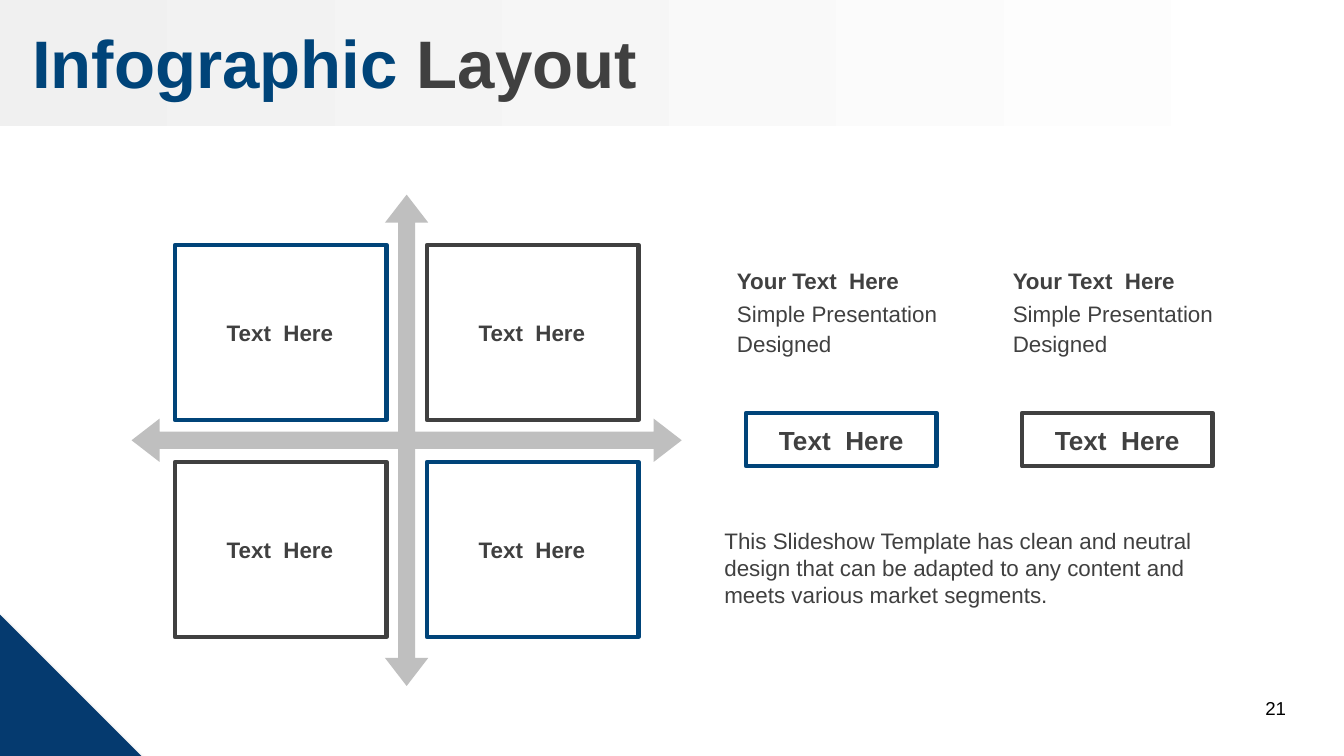
from lxml import etree
from pptx import Presentation
from pptx import util as u
from pptx.dml.color import RGBColor
from pptx.enum import shapes, text
from pptx.oxml import ns

PX = 9525  # EMU, 96 px to the inch
NAVY = RGBColor(0x00, 0x44, 0x79)
CORNER_BLUE = RGBColor(0x05, 0x3A, 0x6F)
CHARCOAL = RGBColor(0x40, 0x40, 0x40)
GREY = RGBColor(0xBF, 0xBF, 0xBF)
PALE = RGBColor(0xF0, 0xF0, 0xF0)
WHITE = RGBColor(0xFF, 0xFF, 0xFF)
BLACK = RGBColor(0x00, 0x00, 0x00)
LEFT, CENTER, RIGHT = text.PP_ALIGN.LEFT, text.PP_ALIGN.CENTER, text.PP_ALIGN.RIGHT

presentation = Presentation()
presentation.slide_width, presentation.slide_height = 960 * PX, 540 * PX
slide = presentation.slides.add_slide(presentation.slide_layouts[5])


def add_shape(kind, left, top, width, height, fill=WHITE, outline=None):
    shape = slide.shapes.add_shape(kind, left * PX, top * PX, width * PX, height * PX)
    shape.shadow.inherit = False
    shape.fill.solid()
    shape.fill.fore_color.rgb = fill
    if outline is None:
        shape.line.fill.background()
    else:
        shape.line.color.rgb = outline
        shape.line.width = u.Pt(2.5)
    return shape


def add_text(words, left, top, width, height, size=12, bold=False, align=LEFT, color=CHARCOAL):
    box = slide.shapes.add_textbox(left * PX, top * PX, width * PX, height * PX)
    box.text_frame.word_wrap = True
    paragraph = box.text_frame.paragraphs[0]
    paragraph.text = words
    paragraph.alignment = align
    paragraph.font.name = "Arial"
    paragraph.font.size = u.Pt(size)
    paragraph.font.bold = bold
    paragraph.font.color.rgb = color
    return paragraph


RECTANGLE = shapes.MSO_SHAPE.RECTANGLE

# Title band
band = add_shape(RECTANGLE, 0, 0, 956, 90)
band.fill.gradient()
band.fill.gradient_angle = 0
for stop, color in zip(band.fill.gradient_stops, (PALE, WHITE)):
    stop.color.rgb = color

# Corner triangle with a soft shadow
corner = add_shape(shapes.MSO_SHAPE.RIGHT_TRIANGLE, -1, 438, 103, 103, CORNER_BLUE)
effects = corner._element.spPr.find(ns.qn("a:effectLst"))
shadow = etree.SubElement(effects, ns.qn("a:outerShdw"), blurRad=str(u.Pt(3.1)),
                          dist=str(u.Pt(1.8)), dir="5400000", rotWithShape="0")
shadow_color = etree.SubElement(shadow, ns.qn("a:srgbClr"), val="000000")
etree.SubElement(shadow_color, ns.qn("a:alpha"), val="35000")

# Title, brought in front of the band
title = slide.shapes.title
title.left, title.top, title.width, title.height = 0, 3 * PX, 960 * PX, 82 * PX
slide.shapes._spTree.append(title._element)
frame = title.text_frame
frame.auto_size = text.MSO_AUTO_SIZE.NONE
frame.vertical_anchor = text.MSO_ANCHOR.MIDDLE
frame.margin_left = 23 * PX
paragraph = frame.paragraphs[0]
paragraph.alignment = LEFT
paragraph.font.name = "Arial"
paragraph.font.size = u.Pt(36)
paragraph.font.bold = True
for words, color in (("Infographic ", NAVY), ("Layout", CHARCOAL)):
    run = paragraph.add_run()
    run.text = words
    run.font.color.rgb = color

# Four-way arrow
arrow = add_shape(shapes.MSO_SHAPE.QUAD_ARROW, 94, 139, 393, 351, GREY)
for index, value in enumerate((0.035, 0.044, 0.057)):
    arrow.adjustments[index] = value

# Quadrants, colours alternating like a chessboard
for row in range(2):
    for column in range(2):
        left, top = 125 + 180 * column, 175 + 155 * row
        add_shape(RECTANGLE, left, top, 151, 125, outline=(NAVY, CHARCOAL)[(row + column) % 2])
        add_text("Text  Here", left + 24, top + 48, 102, 29, bold=True, align=CENTER)

# Two columns: heading, description and framed label
for column, outline in enumerate((NAVY, CHARCOAL)):
    left = 517 + 197 * column
    description = add_text("Simple Presentation Designed", left, 208, 166, 73)
    description.line_spacing = 1.1
    add_text("Your Text  Here", left, 186, 166, 29, bold=True)
    label = add_shape(RECTANGLE, left + 16, 295, 136, 38, outline=outline)
    label.text_frame.vertical_anchor = text.MSO_ANCHOR.MIDDLE
    paragraph = label.text_frame.paragraphs[0]
    paragraph.text = "Text  Here"
    paragraph.alignment = CENTER
    paragraph.font.name = "Arial"
    paragraph.font.size = u.Pt(14)
    paragraph.font.bold = True
    paragraph.font.color.rgb = CHARCOAL

# Closing text and page number
add_text("This Slideshow Template has clean and neutral design that can be adapted "
         "to any content and meets various market segments.", 508, 372, 376, 68)
add_text("21", 704, 493, 224, 29, size=10, align=RIGHT, color=BLACK)

presentation.save("out.pptx")
